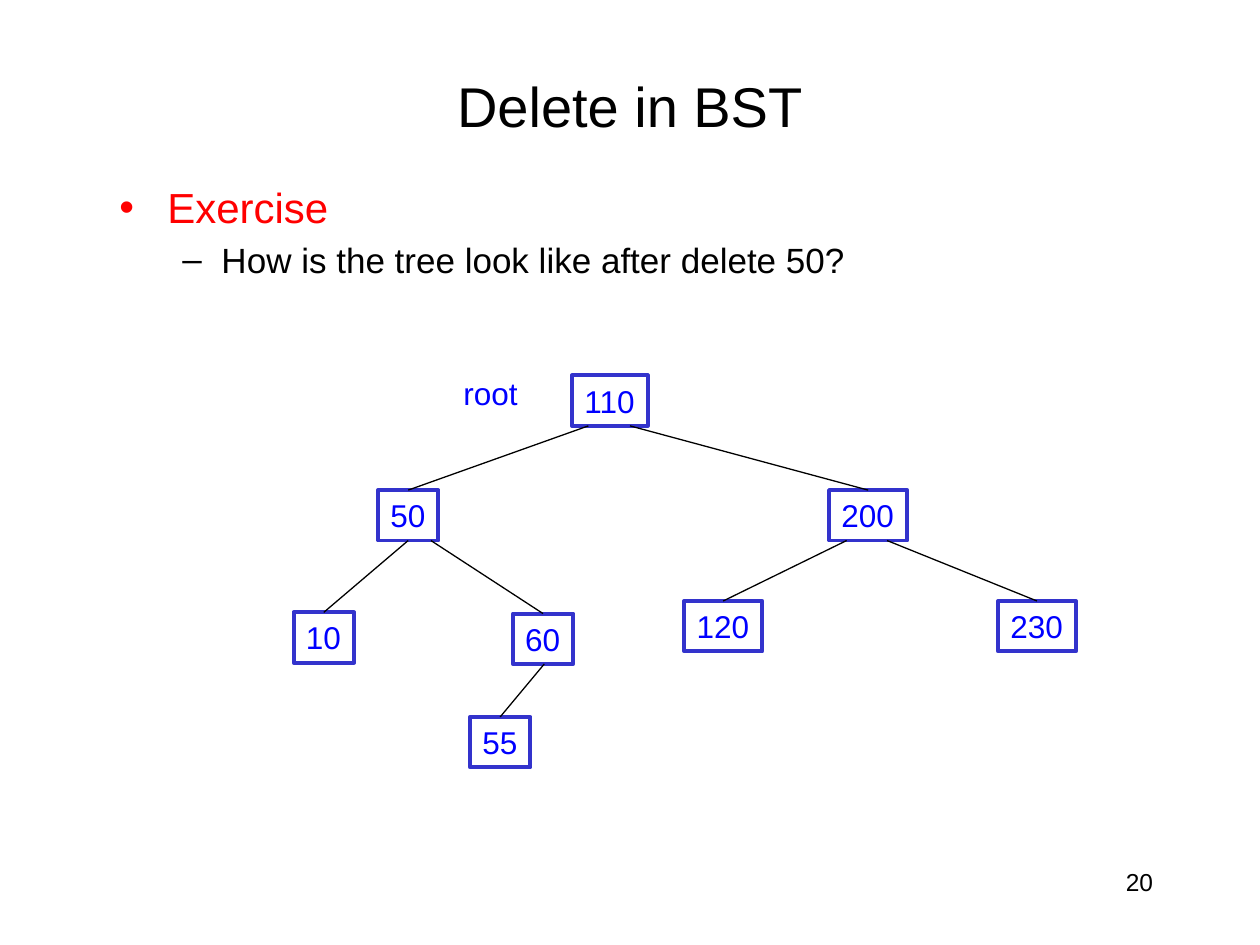
"""Build a slide with a binary search tree deletion exercise."""
from collections import namedtuple
from dataclasses import dataclass

from lxml import etree
from pptx import Presentation
from pptx.dml.color import RGBColor
from pptx.enum.shapes import MSO_CONNECTOR, MSO_SHAPE
from pptx.enum.text import MSO_ANCHOR, MSO_AUTO_SIZE, PP_ALIGN
from pptx.oxml.ns import qn
from pptx.util import Inches, Pt

LEFT, CENTER, RIGHT = PP_ALIGN.LEFT, PP_ALIGN.CENTER, PP_ALIGN.RIGHT
TOP, MIDDLE = MSO_ANCHOR.TOP, MSO_ANCHOR.MIDDLE
FIT_SHAPE = MSO_AUTO_SIZE.SHAPE_TO_FIT_TEXT
RECTANGLE, STRAIGHT = MSO_SHAPE.RECTANGLE, MSO_CONNECTOR.STRAIGHT


@dataclass(frozen=True)
class Theme:
    font: str = "Arial"
    ink: RGBColor = RGBColor(0, 0, 0)
    accent: RGBColor = RGBColor(0xFF, 0, 0)
    key: RGBColor = RGBColor(0, 0, 0xFF)
    border: RGBColor = RGBColor(0x33, 0x33, 0xCC)
    title_size: int = 32
    topic_size: int = 24
    question_size: int = 20
    key_size: int = 18
    number_size: int = 14


theme = Theme()
Node = namedtuple("Node", "left top width")
NODE_HEIGHT = 0.4


def style(paragraph, size, color, align=LEFT):
    paragraph.alignment = align
    for run in paragraph.runs:
        run.font.name = theme.font
        run.font.size = Pt(size)
        run.font.color.rgb = color


def add_label(text, left, top, width, height, size, color, align=LEFT, anchor=TOP):
    label = slide.shapes.add_textbox(Inches(left), Inches(top), Inches(width), Inches(height))
    frame = label.text_frame
    frame.word_wrap = True
    frame.vertical_anchor = anchor
    frame.text = text
    style(frame.paragraphs[0], size, color, align)
    return frame


presentation = Presentation()
presentation.slide_width = Inches(10)
presentation.slide_height = Inches(7.5)
slide = presentation.slides.add_slide(presentation.slide_layouts[6])

add_label("20", 7.17, 6.83, 2.08, 0.5, theme.number_size, theme.ink, RIGHT)
add_label("Delete in BST", 0.75, 0.42, 8.5, 0.83, theme.title_size, theme.ink, CENTER, MIDDLE)

exercise = add_label("Exercise", 0.85, 1.39, 8.5, 1.49, theme.topic_size, theme.accent)
question = exercise.add_paragraph()
question.text = "How is the tree look like after delete 50?"
question.level = 1
style(question, theme.question_size, theme.ink)
outline = [("•", 0.38, 0.38, theme.topic_size), ("–", 0.81, 0.31, theme.question_size)]
for paragraph, (bullet, margin, hanging, size) in zip(exercise.paragraphs, outline):
    paragraph.space_before = Pt(size * 0.2)
    properties = paragraph._p.get_or_add_pPr()
    properties.set("marL", str(Inches(margin)))
    properties.set("indent", str(-Inches(hanging)))
    etree.SubElement(properties, qn("a:buFont")).set("typeface", theme.font)
    etree.SubElement(properties, qn("a:buChar")).set("char", bullet)

tree = {
    110: Node(4.54, 2.98, 0.6),
    50: Node(3, 3.89, 0.48),
    200: Node(6.58, 3.89, 0.62),
    10: Node(2.33, 4.86, 0.48),
    60: Node(4.07, 4.87, 0.48),
    55: Node(3.73, 5.69, 0.48),
    120: Node(5.43, 4.77, 0.62),
    230: Node(7.92, 4.77, 0.62),
}
for key, node in tree.items():
    box = slide.shapes.add_shape(
        RECTANGLE, Inches(node.left), Inches(node.top), Inches(node.width), Inches(NODE_HEIGHT)
    )
    box.shadow.inherit = False
    box.fill.background()
    box.line.color.rgb = theme.border
    box.line.width = Pt(2.25)
    frame = box.text_frame
    frame.word_wrap = False
    frame.auto_size = FIT_SHAPE
    frame.vertical_anchor = TOP
    frame.text = str(key)
    style(frame.paragraphs[0], theme.key_size, theme.key)

root_label = add_label("root", 3.58, 2.92, 0.63, 0.4, theme.key_size, theme.key)
root_label.word_wrap = False
root_label.auto_size = FIT_SHAPE

branches = [
    (110, 50, 4.67),
    (110, 200, 5),
    (50, 10, 3.24),
    (50, 60, 3.42),
    (200, 120, 6.72),
    (200, 230, 7.04),
    (60, 55, 4.32),
]
for parent_key, child_key, start in branches:
    parent, child = tree[parent_key], tree[child_key]
    branch = slide.shapes.add_connector(
        STRAIGHT,
        Inches(start),
        Inches(parent.top + NODE_HEIGHT),
        Inches(child.left + child.width / 2),
        Inches(child.top),
    )
    branch.line.color.rgb = theme.ink
    branch.line.width = Pt(0.75)
    etree.SubElement(branch._element.spPr, qn("a:effectLst"))

presentation.save("out.pptx")
